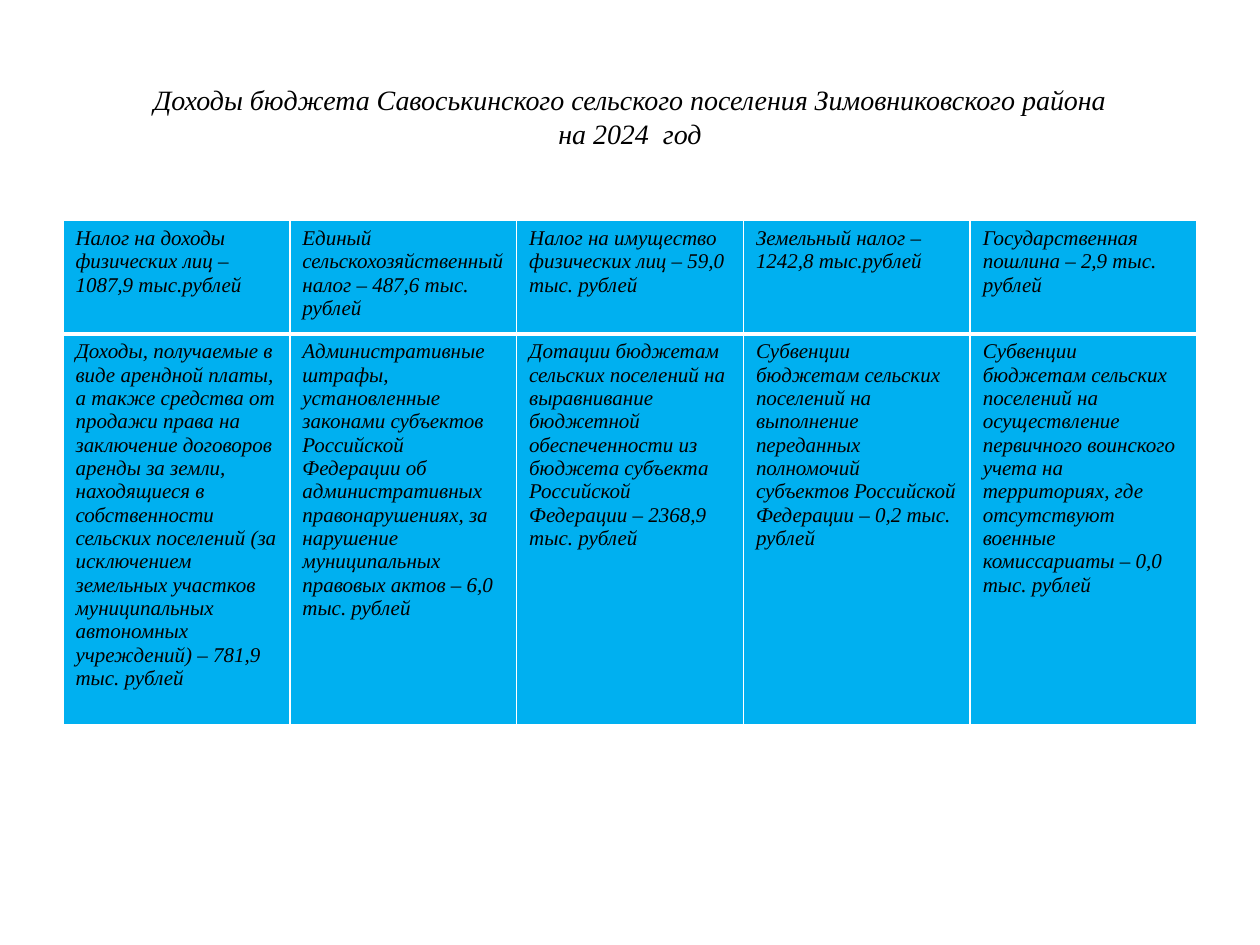
from lxml import etree
from pptx import Presentation
from pptx.dml.color import RGBColor
from pptx.enum.text import MSO_ANCHOR, PP_ALIGN
from pptx.oxml.ns import qn
from pptx.util import Inches, Pt

MIDDLE = MSO_ANCHOR.MIDDLE
CENTER = PP_ALIGN.CENTER
FONT = "Times New Roman"
BLACK, WHITE, SKY = "000000", "FFFFFF", "00B0F0"

TITLE = ("Доходы бюджета Савоськинского сельского поселения Зимовниковского района\v"
         "на 2024  год")
INCOME_ROWS = [
    [
        "Налог на доходы физических лиц – 1087,9 тыс.рублей",
        "Единый сельскохозяйственный налог – 487,6 тыс. рублей",
        "Налог на имущество физических лиц – 59,0 тыс. рублей",
        "Земельный налог – 1242,8 тыс.рублей",
        "Государственная пошлина – 2,9 тыс. рублей",
    ],
    [
        "Доходы, получаемые в виде арендной платы, а также средства от продажи права "
        "на заключение договоров аренды за земли, находящиеся в собственности сельских "
        "поселений (за исключением земельных участков муниципальных автономных "
        "учреждений) – 781,9 тыс. рублей",
        "Административные штрафы, установленные законами субъектов Российской Федерации "
        "об административных правонарушениях, за нарушение муниципальных правовых актов "
        "– 6,0 тыс. рублей",
        "Дотации бюджетам сельских поселений на выравнивание бюджетной обеспеченности "
        "из бюджета субъекта Российской Федерации – 2368,9 тыс. рублей",
        "Субвенции бюджетам сельских поселений на выполнение переданных полномочий "
        "субъектов Российской Федерации – 0,2 тыс. рублей",
        "Субвенции бюджетам сельских поселений на осуществление первичного воинского "
        "учета на территориях, где отсутствуют военные комиссариаты – 0,0 тыс. рублей",
    ],
]
ROW_HEIGHTS = [0.83, 2.86]
COLUMN_WIDTH = 1.8


def color(value):
    """Turn a hex string into a colour."""
    return RGBColor.from_string(value)


def write(frame, text, size):
    """Fill a text frame with black italic text."""
    frame.text = text
    for para in frame.paragraphs:
        for span in para.runs:
            span.font.name = FONT
            span.font.size = Pt(size)
            span.font.italic = True
            span.font.bold = False
            span.font.color.rgb = color(BLACK)


def add_title(page, text):
    """Add the centred slide title."""
    box = page.shapes.add_textbox(Inches(0.5), Inches(0.3), Inches(9), Inches(1.25))
    frame = box.text_frame
    frame.word_wrap = True
    frame.vertical_anchor = MIDDLE
    write(frame, text, 16)
    frame.paragraphs[0].alignment = CENTER


def set_borders(cell, widths):
    """Draw white cell borders with the given widths in points."""
    properties = cell._tc.get_or_add_tcPr()
    for side, width in widths.items():
        line = etree.SubElement(properties, qn(f"a:ln{side}"), w=str(Pt(width)))
        fill = etree.SubElement(line, qn("a:solidFill"))
        etree.SubElement(fill, qn("a:srgbClr"), val=WHITE)


def add_income_table(page, rows):
    """Add the table of budget income items."""
    columns = len(rows[0])
    frame = page.shapes.add_table(
        len(rows), columns, Inches(0.5), Inches(1.75),
        Inches(COLUMN_WIDTH * columns), Inches(sum(ROW_HEIGHTS)))
    table = frame.table
    for column in table.columns:
        column.width = Inches(COLUMN_WIDTH)
    for row_index, texts in enumerate(rows):
        table.rows[row_index].height = Inches(ROW_HEIGHTS[row_index])
        top, bottom = (1, 3) if row_index == 0 else (3, 1)
        for column_index, text in enumerate(texts):
            cell = table.cell(row_index, column_index)
            write(cell.text_frame, text, 12)
            set_borders(cell, {"L": 1, "R": 1, "T": top, "B": bottom})
            cell.fill.solid()
            cell.fill.fore_color.rgb = color(SKY)


def main():
    """Build and save the budget income slide."""
    deck = Presentation()
    deck.slide_width, deck.slide_height = Inches(10), Inches(7.5)
    page = deck.slides.add_slide(deck.slide_layouts[6])
    add_title(page, TITLE)
    add_income_table(page, INCOME_ROWS)
    deck.save("out.pptx")


if __name__ == "__main__":
    main()
